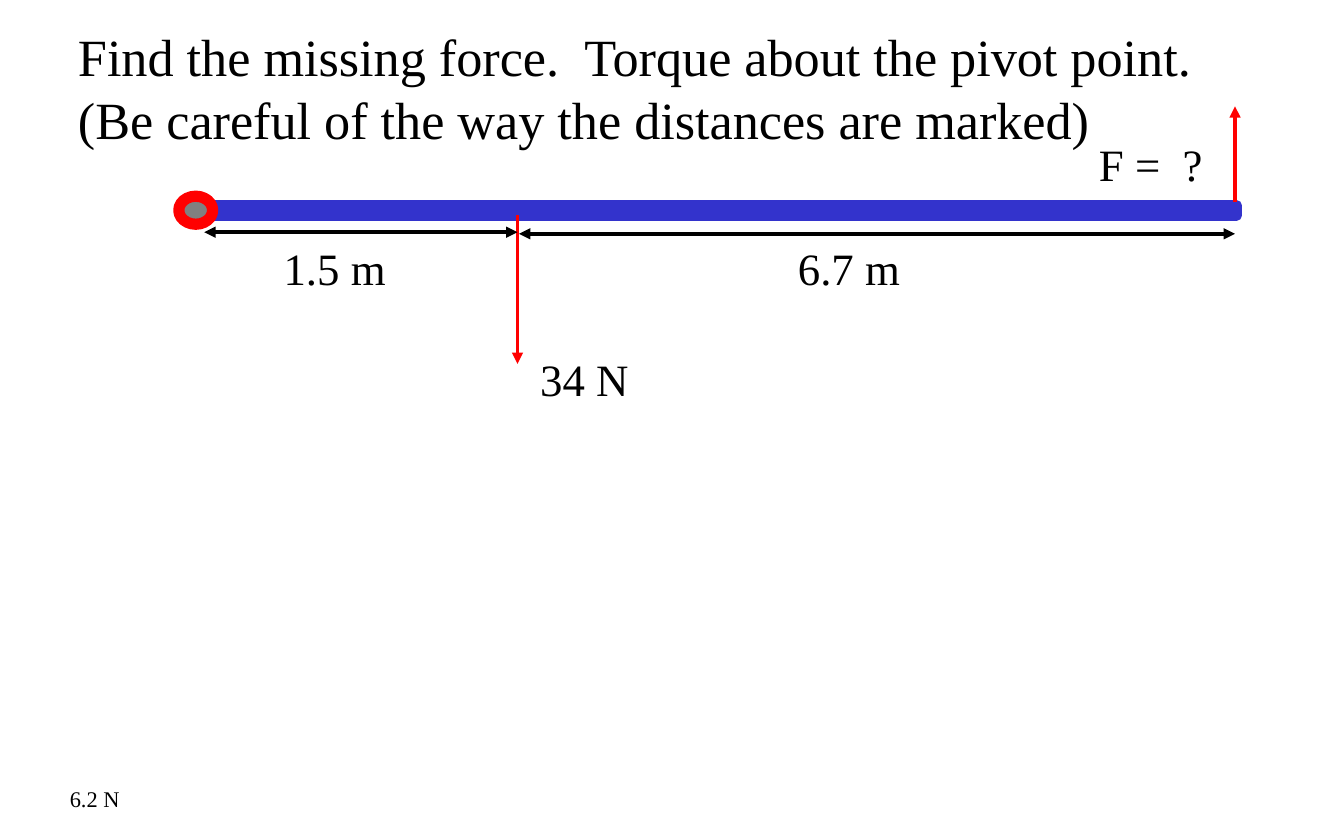
"""Build a torque problem slide: a pivoted beam with two forces and two distances."""
from lxml import etree
from pptx import Presentation
from pptx.dml.color import RGBColor
from pptx.enum.shapes import MSO_CONNECTOR, MSO_SHAPE
from pptx.enum.text import MSO_ANCHOR, MSO_AUTO_SIZE, PP_ALIGN
from pptx.oxml.ns import qn
from pptx.util import Cm, Pt

STRAIGHT = MSO_CONNECTOR.STRAIGHT
RECTANGLE, OVAL = MSO_SHAPE.RECTANGLE, MSO_SHAPE.OVAL
TOP, LEFT, NO_FIT = MSO_ANCHOR.TOP, PP_ALIGN.LEFT, MSO_AUTO_SIZE.NONE

BLACK = RGBColor(0x00, 0x00, 0x00)
RED = RGBColor(0xFF, 0x00, 0x00)
BLUE = RGBColor(0x33, 0x33, 0xCC)
GRAY = RGBColor(0x80, 0x80, 0x80)
FONT = "Times New Roman"

QUESTION = [
    "Find the missing force.  Torque about the pivot point.",
    "(Be careful of the way the distances are marked)",
]
QUESTION_BOX = (1.22, 0.33, 23.55, 2.64)

BODIES = [
    (RECTANGLE, (3.89, 3.89, 19.48, 0.18), BLUE),
    (OVAL, (3.38, 3.71, 0.64, 0.53), RED),
]

PIVOT_X, LOAD_X, LIFT_X = 3.86, 9.78, 23.34
ARROWS = [
    ((LOAD_X, 6.88), (LOAD_X, 4.06), RED, ["headEnd"]),
    ((LIFT_X, 2.01), (LIFT_X, 3.81), RED, ["headEnd"]),
    ((PIVOT_X, 4.39), (LOAD_X, 4.39), BLACK, ["headEnd", "tailEnd"]),
    ((LOAD_X + 0.03, 4.42), (LIFT_X, 4.42), BLACK, ["headEnd", "tailEnd"]),
]

LABELS = [
    ("34 N", (9.96, 6.53, 2.21, 1.27), 24),
    ("F =  ?", (20.52, 2.46, 2.49, 1.27), 24),
    ("1.5 m", (5.11, 4.42, 2.46, 1.27), 24),
    ("6.7 m", (14.83, 4.42, 2.46, 1.27), 24),
    ("6.2 N", (1.07, 14.71, 1.47, 0.76), 12),
]


def write(frame, lines, size, wrap=False):
    frame.word_wrap = wrap
    frame.auto_size = NO_FIT
    frame.vertical_anchor = TOP
    frame.text = "\n".join(lines)
    for paragraph in frame.paragraphs:
        paragraph.alignment = LEFT
        paragraph.font.name = FONT
        paragraph.font.size = Pt(size)
        paragraph.font.color.rgb = BLACK


def add_body(slide, kind, box, outline):
    body = slide.shapes.add_shape(kind, *map(Cm, box))
    body.shadow.inherit = False
    body.fill.solid()
    body.fill.fore_color.rgb = GRAY
    body.line.color.rgb = outline
    body.line.width = Pt(6)


def add_arrow(slide, start, end, color, heads):
    arrow = slide.shapes.add_connector(STRAIGHT, *map(Cm, start + end))
    arrow.line.color.rgb = color
    arrow.line.width = Pt(2)
    properties = arrow.element.spPr
    for head in heads:
        etree.SubElement(properties.find(qn("a:ln")), qn("a:" + head), type="triangle")
    etree.SubElement(properties, qn("a:effectLst"))


def main():
    deck = Presentation()
    deck.slide_width, deck.slide_height = Cm(25.4), Cm(15.88)
    slide = deck.slides.add_slide(deck.slide_layouts[5])

    question = slide.shapes.title
    question.left, question.top, question.width, question.height = map(Cm, QUESTION_BOX)
    write(question.text_frame, QUESTION, size=28, wrap=True)

    for body in BODIES:
        add_body(slide, *body)
    for arrow in ARROWS:
        add_arrow(slide, *arrow)
    for label, box, size in LABELS:
        write(slide.shapes.add_textbox(*map(Cm, box)).text_frame, [label], size=size)

    deck.save("out.pptx")


if __name__ == "__main__":
    main()
